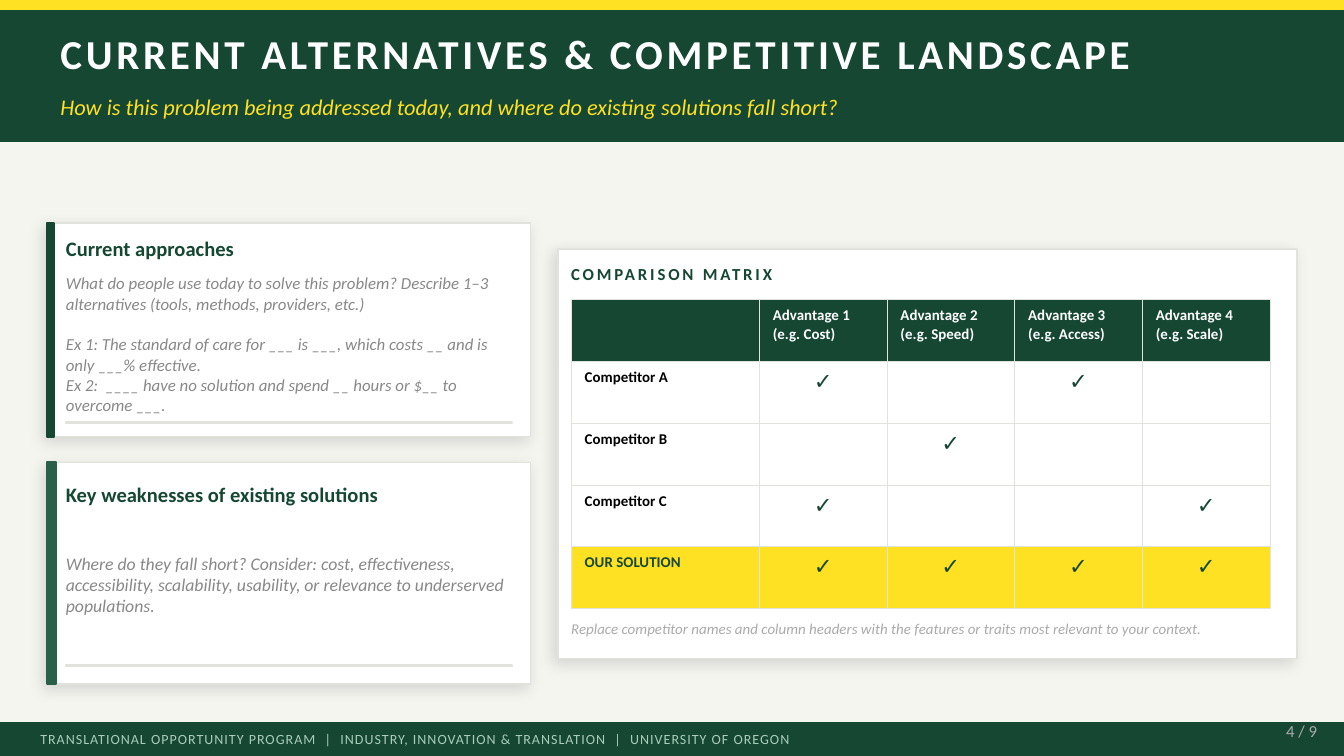
from lxml.etree import SubElement
from pptx import Presentation
from pptx.dml.color import RGBColor
from pptx.enum.shapes import MSO_SHAPE
from pptx.enum.text import MSO_ANCHOR, PP_ALIGN
from pptx.oxml import parse_xml
from pptx.oxml.ns import nsdecls, qn
from pptx.util import Inches, Pt


class Theme:
    font = "Calibri"
    green, light_green, yellow = "154733", "2A6049", "FEE123"
    page, white, black, rule = "F5F5F0", "FFFFFF", "000000", "E2E2DC"
    prompt, muted, footer = "888888", "AAAAAA", "AACCBB"
    title, subtitle, heading, check = 22, 12, 11, 12
    weakness, body, small, foot = 9.5, 9, 8, 7.5


def add_rect(left, top, width, height, color, line=None, line_width=1, shadow=False):
    sp = s.shapes.add_shape(MSO_SHAPE.RECTANGLE, Inches(left), Inches(top),
                            Inches(width), Inches(height))
    sp.shadow.inherit = False
    sp.fill.solid()
    sp.fill.fore_color.rgb = RGBColor.from_string(color)
    sp.line.color.rgb = RGBColor.from_string(line or color)
    sp.line.width = Pt(line_width)
    if shadow:
        effects = sp._element.spPr.find(qn("a:effectLst"))
        effects.append(parse_xml(
            f'<a:outerShdw {nsdecls("a")} blurRad="{Pt(8)}" dist="{Pt(3)}" '
            f'dir="{135 * 60000}" algn="bl" rotWithShape="0"><a:srgbClr val="{Theme.black}">'
            '<a:alpha val="12000"/></a:srgbClr></a:outerShdw>'))


def write_text(tf, text, size, color, bold=False, italic=False, spacing=0,
               align=PP_ALIGN.LEFT):
    """Fill a text frame, one paragraph per line; spacing is between letters, in points."""
    tf.text = text
    for p in tf.paragraphs:
        p.alignment = align
        for r in p.runs:
            r.font.name = Theme.font
            r.font.size = Pt(size)
            r.font.color.rgb = RGBColor.from_string(color)
            r.font.bold = bold
            r.font.italic = italic
            if spacing:
                r._r.get_or_add_rPr().set("spc", str(int(spacing * 100)))


prs = Presentation()
prs.slide_width = Inches(10)
prs.slide_height = prs.slide_width * 9 // 16
s = prs.slides.add_slide(prs.slide_layouts[6])
s.background.fill.solid()
s.background.fill.fore_color.rgb = RGBColor.from_string(Theme.page)

# Header and footer bands
add_rect(0, 0, 10, 1.05, Theme.green)
add_rect(0, 0, 10, 0.07, Theme.yellow)
add_rect(0, 5.38, 10, 0.24, Theme.green)

# Cards on the left: top, height, accent width, accent colour, rule position
for top, height, accent_width, accent, rule_top in [
    (1.66, 1.59, 0.05, Theme.green, 3.14),
    (3.44, 1.65, 0.07, Theme.light_green, 4.95),
]:
    add_rect(0.35, top, 3.6, height, Theme.white, Theme.rule, 0.75, shadow=True)
    add_rect(0.35, top, accent_width, height, accent)
    add_rect(0.49, rule_top, 3.32, 0.01, Theme.rule)

# Card behind the matrix
add_rect(4.15, 1.85, 5.5, 3.05, Theme.white, Theme.rule, shadow=True)

approaches = (
    "What do people use today to solve this problem? Describe 1–3 alternatives "
    "(tools, methods, providers, etc.)\n"
    "Ex 1: The standard of care for ___ is ___, which costs __ and is only ___% effective.\n"
    "Ex 2:  ____ have no solution and spend __ hours or $__ to overcome ___.")
weaknesses = (
    "Where do they fall short? Consider: cost, effectiveness, accessibility, "
    "scalability, usability, or relevance to underserved populations.")

heading = dict(size=Theme.heading, color=Theme.green, bold=True)
for left, top, width, height, text, style in [
    (0.45, 0.12, 8.5, 0.55, "CURRENT ALTERNATIVES & COMPETITIVE LANDSCAPE",
     dict(size=Theme.title, color=Theme.white, bold=True, spacing=2)),
    (0.45, 0.62, 8.5, 0.35,
     "How is this problem being addressed today, and where do existing solutions fall short?",
     dict(size=Theme.subtitle, color=Theme.yellow, italic=True)),
    (0.3, 5.38, 9, 0.24,
     "TRANSLATIONAL OPPORTUNITY PROGRAM  |  INDUSTRY, INNOVATION & TRANSLATION  |  "
     "UNIVERSITY OF OREGON",
     dict(size=Theme.foot, color=Theme.footer, spacing=0.5)),
    (8.9, 5.33, 0.9, 0.22, "4 / 9",
     dict(size=Theme.body, color=Theme.muted, align=PP_ALIGN.RIGHT)),
    (0.49, 1.71, 3.35, 0.28, "Current approaches", heading),
    (0.49, 2.03, 3.35, 1.06, approaches,
     dict(size=Theme.body, color=Theme.prompt, italic=True)),
    (0.49, 3.54, 3.35, 0.28, "Key weaknesses of existing solutions", heading),
    (0.49, 3.8, 3.35, 1.1, weaknesses,
     dict(size=Theme.weakness, color=Theme.prompt, italic=True)),
    (4.25, 1.9, 5.2, 0.28, "COMPARISON MATRIX",
     dict(size=Theme.body, color=Theme.green, bold=True, spacing=1.5)),
    (4.25, 4.58, 5.2, 0.2,
     "Replace competitor names and column headers with the features or traits "
     "most relevant to your context.",
     dict(size=Theme.small, color=Theme.muted, italic=True)),
]:
    tf = s.shapes.add_textbox(Inches(left), Inches(top), Inches(width),
                              Inches(height)).text_frame
    tf.word_wrap = True
    tf.vertical_anchor = MSO_ANCHOR.MIDDLE
    tf.margin_left = tf.margin_right = tf.margin_top = tf.margin_bottom = 0
    write_text(tf, text, **style)
    if text == approaches:
        tf.paragraphs[1].space_before = Pt(11)

# Comparison matrix
matrix = [
    ["", "Advantage 1\n(e.g. Cost)", "Advantage 2\n(e.g. Speed)",
     "Advantage 3\n(e.g. Access)", "Advantage 4\n(e.g. Scale)"],
    ["Competitor A", "✓", "", "✓", ""],
    ["Competitor B", "", "✓", "", ""],
    ["Competitor C", "✓", "", "", "✓"],
    ["OUR SOLUTION", "✓", "✓", "✓", "✓"],
]
row_styles = ([(Theme.green, Theme.white)] + [(Theme.white, Theme.black)] * 3
              + [(Theme.yellow, Theme.green)])
table = s.shapes.add_table(5, 5, Inches(4.25), Inches(2.23), Inches(5.2), Inches(2.3)).table
for column, width in zip(table.columns, [1.4] + [0.95] * 4):
    column.width = Inches(width)
for row, values, (fill, color) in zip(table.rows, matrix, row_styles):
    row.height = Inches(0.46)
    for cell, text in zip(row.cells, values):
        if text == "✓":
            write_text(cell.text_frame, text, Theme.check, Theme.green,
                       align=PP_ALIGN.CENTER)
        elif text:
            write_text(cell.text_frame, text, Theme.small, color, bold=True)
        tcPr = cell._tc.get_or_add_tcPr()
        for side in ("lnL", "lnR", "lnT", "lnB"):
            ln = SubElement(tcPr, qn(f"a:{side}"), w=str(Pt(0.5)))
            SubElement(SubElement(ln, qn("a:solidFill")), qn("a:srgbClr"), val=Theme.rule)
        cell.fill.solid()
        cell.fill.fore_color.rgb = RGBColor.from_string(fill)

prs.save("out.pptx")
